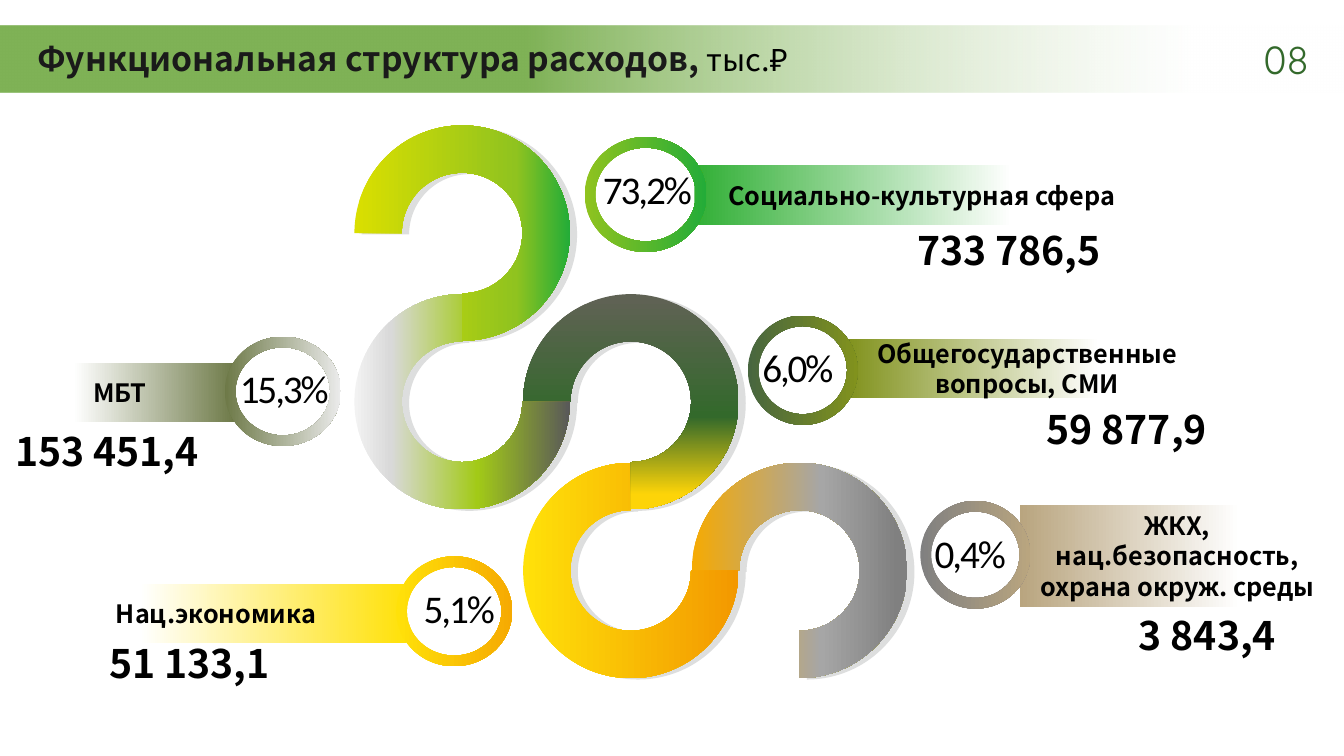
import lxml.etree
import pptx
import pptx.dml.color
import pptx.enum.shapes
import pptx.enum.text
import pptx.oxml.ns
import pptx.util

Pt = pptx.util.Pt
RGBColor = pptx.dml.color.RGBColor
SHAPES = pptx.enum.shapes.MSO_SHAPE
ALIGN = pptx.enum.text.PP_ALIGN
ANCHOR = pptx.enum.text.MSO_ANCHOR
qn = pptx.oxml.ns.qn

WHITE = RGBColor(0xFF, 0xFF, 0xFF)
BLACK = RGBColor(0x00, 0x00, 0x00)
INK = RGBColor(0x1A, 0x1A, 0x1A)
HEADER_GREEN = RGBColor(0x7F, 0xB2, 0x56)
DARK_GREEN = RGBColor(0x33, 0x69, 0x2B)
SHADE = RGBColor(0xDD, 0xDE, 0xDE)
LEMON = RGBColor(0xDA, 0xDF, 0x00)
LIME = RGBColor(0x90, 0xC3, 0x1F)
GREEN = RGBColor(0x23, 0xAC, 0x38)
BAR_GREEN = RGBColor(0x31, 0xAF, 0x35)
PALE = RGBColor(0xF2, 0xF2, 0xF2)
SILVER = RGBColor(0xD9, 0xD9, 0xD9)
GRASS = RGBColor(0xA2, 0xCA, 0x17)
CHARCOAL = RGBColor(0x59, 0x59, 0x59)
STONE = RGBColor(0x5F, 0x62, 0x54)
GOLD = RGBColor(0xFD, 0xD4, 0x08)
YELLOW = RGBColor(0xFF, 0xE1, 0x09)
ORANGE = RGBColor(0xF3, 0x98, 0x00)
AMBER = RGBColor(0xF6, 0xAA, 0x02)
GREY = RGBColor(0xA6, 0xA6, 0xA6)
DARK_GREY = RGBColor(0x80, 0x80, 0x80)
MOSS = RGBColor(0x48, 0x66, 0x3F)
OLIVE = RGBColor(0x81, 0x92, 0x1D)
SAND = RGBColor(0xB9, 0xA5, 0x7F)
SAGE = RGBColor(0x6D, 0x79, 0x47)
MIST = RGBColor(0xEB, 0xEB, 0xEB)

TITLE = {"name": "Noto Sans CJK SC", "size": Pt(24), "bold": True}
UNIT = {"name": "Noto Sans CJK SC", "size": Pt(22), "bold": False}
PAGE_NUMBER = {"name": "Quicksand", "size": Pt(28)}
LABEL = {"name": "Noto Sans CJK SC", "size": Pt(18), "bold": True}
AMOUNT = {"name": "Noto Sans CJK SC", "size": Pt(28), "bold": True}
PERCENT = {"name": "Calibri", "size": Pt(28)}


def add_painted(kind, left, top, width, height, stops, angle=0):
    """Add a borderless shape; stops are (percent, colour[, opacity])."""
    shape = page.shapes.add_shape(kind, Pt(left), Pt(top), Pt(width), Pt(height))
    shape.shadow.inherit = False
    shape.line.fill.background()
    if len(stops) == 1:
        shape.fill.solid()
        shape.fill.fore_color.rgb = stops[0][1]
        return shape
    shape.fill.gradient()
    shape.fill.gradient_angle = -angle % 360
    stop_list = shape._element.spPr.find(".//" + qn("a:gsLst"))
    for old_stop in list(stop_list):
        stop_list.remove(old_stop)
    for position, color, *opacity in stops:
        stop = lxml.etree.SubElement(stop_list, qn("a:gs"), pos=str(position * 1000))
        tone = lxml.etree.SubElement(stop, qn("a:srgbClr"), val=str(color))
        for percent in opacity:
            lxml.etree.SubElement(tone, qn("a:alpha"), val=str(percent * 1000))
    return shape


def write(box, text, style, color, align=ALIGN.CENTER):
    """Append a formatted span to the first paragraph of a box."""
    box.text_frame.word_wrap = True
    para = box.text_frame.paragraphs[0]
    para.alignment = align
    span = para.add_run()
    span.text = text
    for name, value in style.items():
        setattr(span.font, name, value)
    span.font.color.rgb = color
    return span


deck = pptx.Presentation()
deck.slide_width, deck.slide_height = Pt(960), Pt(540)
page = deck.slides.add_slide(deck.slide_layouts[5])

# Header: band, title, page number
add_painted(SHAPES.RECTANGLE, 0, 18, 960, 48.2,
            [(39, HEADER_GREEN), (89, WHITE, 40)])
title = page.shapes.title
page.shapes._spTree.append(title._element)
title.left, title.top, title.width, title.height = Pt(19.4), Pt(23.8), Pt(622), Pt(36)
title.text_frame.vertical_anchor = ANCHOR.TOP
write(title, "Функциональная структура расходов, ", TITLE, INK, ALIGN.LEFT)
write(title, "тыс.₽", UNIT, BLACK, ALIGN.LEFT)
number = page.shapes.add_textbox(Pt(877.7), Pt(21.6), Pt(82), Pt(41))
write(number, "08", PAGE_NUMBER, DARK_GREEN)

# Ribbon: three-quarter rings on a square grid, the shade layer first
RING_SIZE, RING_PITCH = 153.8, 120.5
RIBBON_LEFT, RIBBON_TOP = 253.2, 89.6
OPEN_LEFT, OPEN_RIGHT = (180, 90), (0, 270)
ribbon = [  # column, row, (start, end) in degrees, gradient, angle
    (2, 2, OPEN_LEFT, [(0, AMBER), (60, GREY), (96, DARK_GREY)], 0),
    (1, 2, OPEN_RIGHT, [(0, YELLOW), (100, ORANGE)], 0),
    (1, 1, OPEN_LEFT, [(2, STONE), (57, DARK_GREEN), (93, GOLD)], 90),
    (0, 1, OPEN_RIGHT, [(0, PALE), (17, SILVER), (57, GRASS), (100, CHARCOAL)], 0),
    (0, 0, OPEN_LEFT, [(0, LEMON), (75, LIME), (100, GREEN)], 0),
]
for shift_x, shift_y, shade in ((5.2, 1, [(0, SHADE)]), (0, 0, None)):
    for column, row, (start, end), stops, angle in ribbon:
        arc = add_painted(SHAPES.BLOCK_ARC,
                          RIBBON_LEFT + column * RING_PITCH + shift_x,
                          RIBBON_TOP + row * RING_PITCH + shift_y,
                          RING_SIZE, RING_SIZE, shade or stops, angle)
        # Angles are stored in 60000ths of a degree, adjustments in 100000ths
        arc.adjustments[0] = start * 0.6
        arc.adjustments[1] = end * 0.6
        arc.adjustments[2] = 0.22

# Expense items: bar and ring are left, top, width, height;
# percent and amount are centre, top
items = [
    {"label": "Социально-культурная сфера", "percent": "73,2%", "amount": "733 786,5",
     "bar": (496, 118.1, 324.7, 42.5), "fade": [(0, BAR_GREEN), (70, WHITE)],
     "ring": (417.6, 97.9, 87.1, 82.1), "tones": [(0, LIME), (100, GREEN)],
     "percent_at": (462.4, 114.5), "amount_at": (720.7, 158.4)},
    {"label": "Общегосударственные вопросы, СМИ", "percent": "6,0%", "amount": "59 877,9",
     "bar": (605.5, 241.9, 256.3, 42.5), "fade": [(0, OLIVE), (70, WHITE)],
     "ring": (534.2, 225.4, 78.5, 78.1), "tones": [(0, MOSS), (100, OLIVE)],
     "percent_at": (569.9, 241.9), "amount_at": (804.9, 285.8)},
    {"label": "ЖКХ, нац.безопасность, охрана окруж. среды", "percent": "0,4%",
     "amount": "3 843,4",
     "bar": (728.6, 360.7, 224.6, 72.7), "fade": [(0, SAND), (70, WHITE)],
     "ring": (657.4, 357.8, 78.5, 77), "tones": [(0, DARK_GREY), (100, SAND)],
     "percent_at": (693, 374.4), "amount_at": (862.5, 433.4)},
    {"label": "МБТ", "percent": "15,3%", "amount": "153 451,4",
     "bar": (2.9, 259.2, 165.6, 42.5), "fade": [(30, WHITE), (100, SAGE)],
     "ring": (160.6, 240.5, 82.8, 78.1), "tones": [(0, SAGE), (100, MIST)],
     "percent_at": (203, 257), "amount_at": (76.3, 301.7)},
    {"label": "Нац.экономика", "percent": "5,1%", "amount": "51 133,1",
     "bar": (18.7, 416.9, 271.4, 42.5), "fade": [(30, WHITE), (100, YELLOW)],
     "ring": (283, 397.4, 82.8, 78.5), "tones": [(0, YELLOW), (100, AMBER)],
     "percent_at": (328, 414), "amount_at": (135.4, 452.9)},
]
RING_THICKNESS = 7.6
for item in items:
    bar = add_painted(SHAPES.RECTANGLE, *item["bar"], item["fade"])
    bar.text_frame.vertical_anchor = ANCHOR.MIDDLE
    write(bar, item["label"], LABEL, BLACK)
    ring = add_painted(SHAPES.DONUT, *item["ring"], item["tones"])
    ring.adjustments[0] = RING_THICKNESS / min(item["ring"][2:])
    for part, style, width in (("percent", PERCENT, 90), ("amount", AMOUNT, 150)):
        center, top = item[part + "_at"]
        box = page.shapes.add_textbox(Pt(center - width / 2), Pt(top), Pt(width), Pt(41))
        box.text_frame.margin_left = box.text_frame.margin_right = 0
        span = write(box, item[part], style, BLACK)
        if part == "percent":
            span.font._element.set("spc", "-150")

deck.save("out.pptx")
